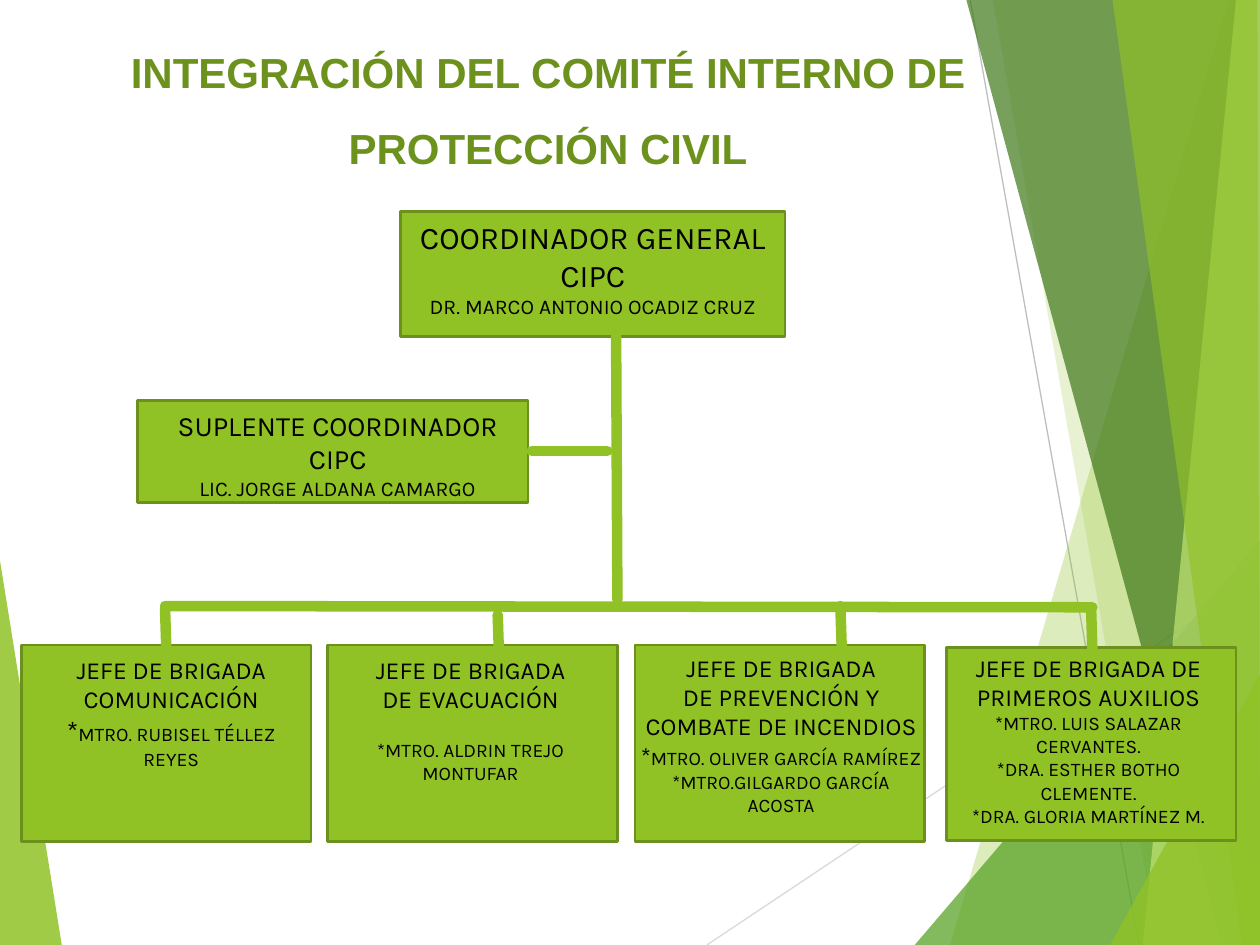
from dataclasses import dataclass

from lxml.etree import SubElement
from pptx import Presentation
from pptx.dml.color import RGBColor
from pptx.enum.shapes import MSO_CONNECTOR, MSO_SHAPE
from pptx.enum.text import MSO_ANCHOR, MSO_AUTO_SIZE, PP_ALIGN
from pptx.oxml.ns import qn
from pptx.util import Inches, Pt


@dataclass(frozen=True)
class Theme:
    title_font: str = "Arial"
    body_font: str = "Karla"
    title: str = "6C921D"
    text: str = "000000"
    green: str = "90C226"
    outline: str = "6B901C"
    leaf: str = "54A021"
    forest: str = "3F7819"
    lime: str = "C0E474"
    grey: str = "BFBFBF"
    pale_grey: str = "D9D9D9"
    title_size: float = 24
    general_size: float = 18
    deputy_size: float = 16
    chief_size: float = 14
    name_size: float = 12
    member_size: float = 11
    star_size: float = 16
    link_width: float = 6


THEME = Theme()


@dataclass(frozen=True)
class Line:
    """One paragraph; star is the size of a larger asterisk put before it."""
    text: str
    size: float
    star: float = 0
    before: float = 0


def chief(text):
    return Line(text, THEME.chief_size)


def member(text, star=0, before=0):
    return Line(text, THEME.member_size, star, before)


# Fill, opacity in percent, corner points
FACETS_BEHIND = [(THEME.green, 85, [(0, 4.45), (0.49, 7.5), (0, 7.5)])]
FACETS = [
    (THEME.green, 30, [(9.75, 0), (7.54, 7.5), (10, 7.5), (10, 0)]),
    (THEME.green, 20, [(7.88, 0), (9.19, 7.5), (10, 7.5), (10, 0)]),
    (THEME.leaf, 72, [(7.26, 7.5), (10, 4.29), (10, 7.5)]),
    (THEME.forest, 70, [(7.67, 0), (9.7, 7.5), (10, 7.5), (10, 0)]),
    (THEME.lime, 70, [(9.81, 0), (9.07, 7.5), (10, 7.5), (10, 0)]),
    (THEME.green, 65, [(8.83, 0), (9.86, 7.5), (10, 7.5), (9.98, 0)]),
    (THEME.green, 80, [(8.81, 7.5), (10, 5.35), (10, 7.5)]),
]
HAIRLINES = [
    ((5.61, 7.5), (10, 4.57), THEME.pale_grey),
    ((7.7, 0), (9.04, 7.5), THEME.grey),
]

PROCESS, RECTANGLE = MSO_SHAPE.FLOWCHART_PROCESS, MSO_SHAPE.RECTANGLE
CARDS = [
    (PROCESS, (3.18, 1.68, 3.05, 0.99)),
    (PROCESS, (1.09, 3.18, 3.1, 0.81)),
    *[(RECTANGLE, (left, 5.12, 2.3, 1.56)) for left in (0.17, 2.6, 5.04)],
    (RECTANGLE, (7.51, 5.14, 2.3, 1.53)),
]
LINKS = [
    ((4.89, 2.67), (4.9, 4.76)),
    ((4.22, 3.58), (4.82, 3.58)),
    ((1.31, 4.81), (8.67, 4.82)),
    *[((x, top), (x + 0.01, bottom)) for x, top, bottom in (
        (1.31, 4.83, 5.14), (3.95, 4.88, 5.19),
        (6.67, 4.81, 5.13), (8.66, 4.84, 5.16))],
]
LABELS = [
    ((3.18, 1.68, 3.05, 0.91), [
        Line("COORDINADOR GENERAL CIPC", THEME.general_size),
        Line("DR. MARCO ANTONIO OCADIZ CRUZ", THEME.name_size)]),
    ((1.14, 3.19, 3.08, 0.84), [
        Line("SUPLENTE COORDINADOR CIPC", THEME.deputy_size),
        Line("LIC. JORGE ALDANA CAMARGO", THEME.name_size)]),
    ((0.21, 5.15, 2.3, 1.33), [
        chief("JEFE DE BRIGADA"),
        chief("COMUNICACIÓN"),
        member("MTRO. RUBISEL TÉLLEZ REYES", star=THEME.star_size)]),
    ((2.58, 5.15, 2.31, 1.33), [
        chief("JEFE DE BRIGADA"),
        chief("DE EVACUACIÓN"),
        member("*MTRO. ALDRIN TREJO MONTUFAR", before=14)]),
    ((4.98, 5.13, 2.44, 1.41), [
        chief("JEFE DE BRIGADA"),
        chief("DE PREVENCIÓN Y COMBATE DE INCENDIOS"),
        member("MTRO. OLIVER GARCÍA RAMÍREZ", star=THEME.chief_size),
        member("*MTRO.GILGARDO GARCÍA ACOSTA")]),
    ((7.47, 5.13, 2.34, 1.68), [
        chief("JEFE DE BRIGADA DE PRIMEROS AUXILIOS"),
        member("*MTRO. LUIS SALAZAR CERVANTES."),
        member("*DRA. ESTHER BOTHO CLEMENTE."),
        member("*DRA. GLORIA MARTÍNEZ M.")]),
]


def color(code):
    return RGBColor.from_string(code)


def style_span(span, font, size, code, bold=False):
    span.font.name, span.font.size, span.font.bold = font, Pt(size), bold
    span.font.color.rgb = color(code)


def add_facet(page, code, opacity, points):
    """Translucent polygon of the background."""
    start, *rest = [(Inches(x), Inches(y)) for x, y in points]
    builder = page.shapes.build_freeform(*start)
    builder.add_line_segments(rest, close=True)
    facet = builder.convert_to_shape()
    facet.shadow.inherit = False
    facet.fill.solid()
    facet.fill.fore_color.rgb = color(code)
    facet.line.fill.background()
    fill = facet.element.spPr.find(qn("a:solidFill"))
    SubElement(fill[0], qn("a:alpha"), val=str(opacity * 1000))


def add_line(page, start, end, code, width, cap="flat"):
    ends = [Inches(value) for value in (*start, *end)]
    line = page.shapes.add_connector(MSO_CONNECTOR.STRAIGHT, *ends)
    line.line.color.rgb = color(code)
    line.line.width = Pt(width)
    properties = line.element.spPr
    properties.find(qn("a:ln")).set("cap", cap)
    SubElement(properties, qn("a:effectLst"))


def add_card(page, kind, place):
    card = page.shapes.add_shape(kind, *map(Inches, place))
    card.shadow.inherit = False
    card.fill.solid()
    card.fill.fore_color.rgb = color(THEME.green)
    card.line.color.rgb = color(THEME.outline)
    card.line.width = Pt(1.5)


def add_label(page, place, lines):
    frame = page.shapes.add_textbox(*map(Inches, place)).text_frame
    frame.word_wrap = True
    frame.text = "\n".join("*" if line.star else line.text for line in lines)
    for para, line in zip(frame.paragraphs, lines):
        para.alignment = PP_ALIGN.CENTER
        para.space_before = Pt(line.before)
        if line.star:
            para.add_run().text = line.text
        for span in para.runs:
            style_span(span, THEME.body_font, line.size, THEME.text)
        if line.star:
            para.runs[0].font.size = Pt(line.star)


def set_title(page, text):
    title = page.shapes.title
    title.left, title.top, title.width, title.height = map(
        Inches, (0.45, 0.12, 7.8, 1.31))
    frame = title.text_frame
    frame.text = text
    frame.auto_size = MSO_AUTO_SIZE.NONE
    frame.vertical_anchor = MSO_ANCHOR.TOP
    for para in frame.paragraphs:
        para.alignment = PP_ALIGN.CENTER
        para.line_spacing = 1.5
        style_span(para.runs[0], THEME.title_font, THEME.title_size,
                   THEME.title, bold=True)


def main():
    deck = Presentation()
    deck.slide_width, deck.slide_height = Inches(10), Inches(7.5)
    page = deck.slides.add_slide(deck.slide_layouts[5])
    for facet in FACETS_BEHIND:
        add_facet(page, *facet)
    for hairline in HAIRLINES:
        add_line(page, *hairline, width=0.75)
    for facet in FACETS:
        add_facet(page, *facet)
    set_title(page, "INTEGRACIÓN DEL COMITÉ INTERNO DE\nPROTECCIÓN CIVIL")
    for card in CARDS:
        add_card(page, *card)
    for link in LINKS:
        add_line(page, *link, THEME.green, THEME.link_width, cap="rnd")
    for label in LABELS:
        add_label(page, *label)
    deck.save("out.pptx")


if __name__ == "__main__":
    main()
